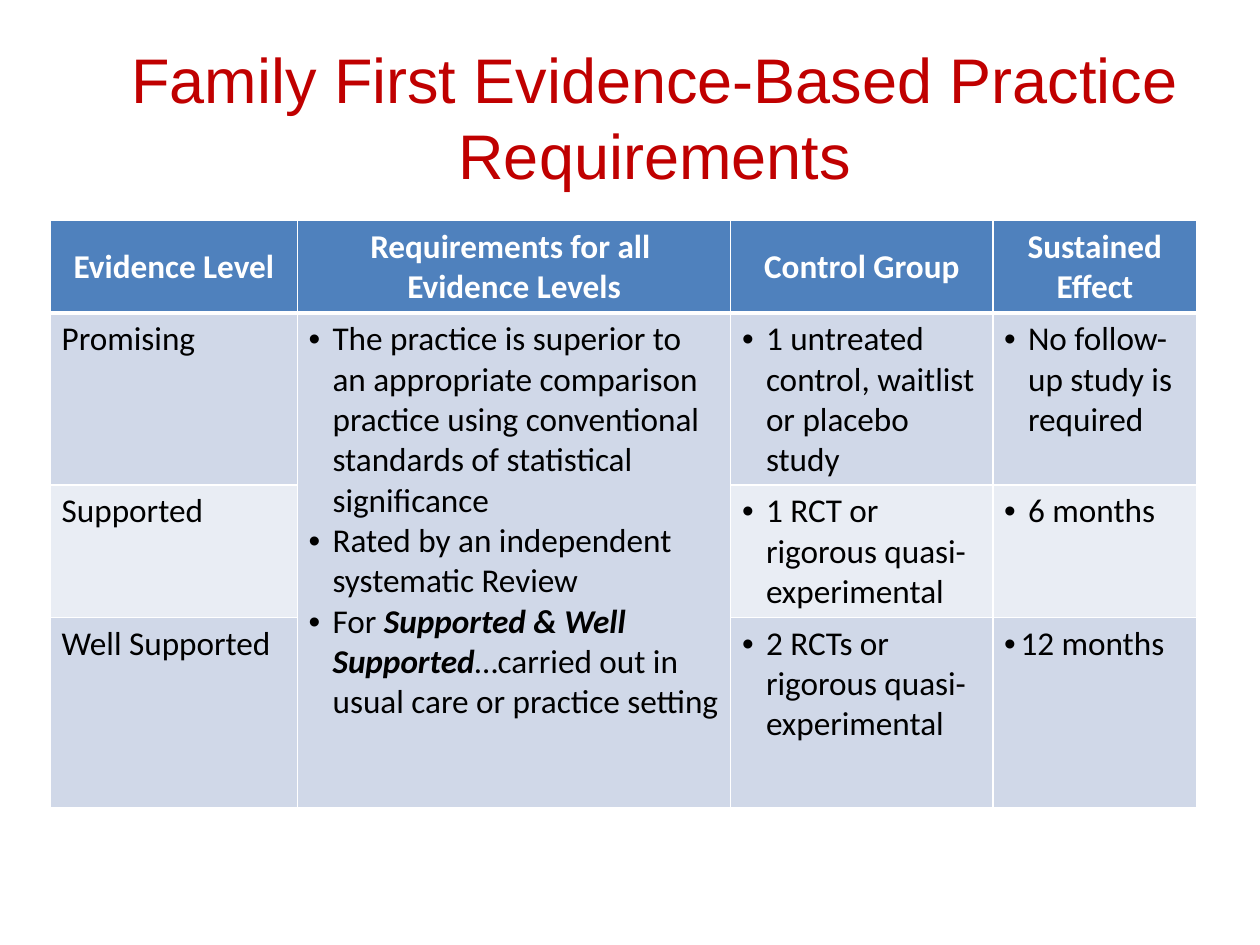
from dataclasses import dataclass

from lxml import etree
from pptx import Presentation
from pptx.dml.color import RGBColor
from pptx.enum.text import MSO_ANCHOR, PP_ALIGN
from pptx.oxml.ns import qn
from pptx.util import Inches, Pt

CENTER, LEFT = PP_ALIGN.CENTER, PP_ALIGN.LEFT
MIDDLE, TOP = MSO_ANCHOR.MIDDLE, MSO_ANCHOR.TOP

WHITE = RGBColor(0xFF, 0xFF, 0xFF)
BLACK = RGBColor(0x00, 0x00, 0x00)
RED = RGBColor(0xC0, 0x00, 0x00)
HEADER_BLUE = RGBColor(0x4F, 0x81, 0xBD)
BAND_DARK = RGBColor(0xD0, 0xD8, 0xE8)
BAND_LIGHT = RGBColor(0xE9, 0xED, 0xF4)

TITLE_FONT = {"name": "Arial", "size": Pt(36)}
HEADER_FONT = {"name": "Calibri", "size": Pt(19), "bold": True}
BODY_FONT = {"name": "Calibri", "size": Pt(19), "bold": False}
EMPHASIS = {"bold": True, "italic": True}

COLUMN_WIDTHS = (1.96, 3.44, 2.08, 1.62)
ROW_HEIGHTS = (0.73, 1.35, 1.04, 1.51)
CELL_MARGIN = 0.09
BULLET_INDENT = 0.19


@dataclass(frozen=True)
class Part:
    text: str
    emphasis: bool = False


@dataclass(frozen=True)
class Level:
    name: str
    control: str
    effect: str
    fill: RGBColor
    effect_indent: float = BULLET_INDENT


HEADERS = ("Evidence Level", "Requirements for all \nEvidence Levels",
           "Control Group", "Sustained Effect")
REQUIREMENTS = (
    (Part("The practice is superior to an appropriate comparison practice "
          "using conventional standards of statistical significance"),),
    (Part("Rated by an independent systematic Review"),),
    (Part("For "), Part("Supported & Well Supported", True),
     Part("…", False), Part("carried out in usual care or practice setting")),
)
LEVELS = (
    Level("Promising", "1 untreated control, waitlist or placebo study",
          "No follow-up study is required", BAND_DARK),
    Level("Supported", "1 RCT or rigorous quasi-experimental",
          "6 months", BAND_LIGHT),
    Level("Well Supported", "2 RCTs or rigorous quasi-experimental",
          "12 months", BAND_DARK, 0.13),
)


def add_text(paragraph, text: str, font: dict, color: RGBColor) -> None:
    """Add a formatted run for each line of the text."""
    for number, line in enumerate(text.split("\n")):
        if number:
            paragraph.add_line_break()
        run = paragraph.add_run()
        run.text = line
        for attribute, value in font.items():
            setattr(run.font, attribute, value)
        run.font.color.rgb = color


def add_bullet(paragraph, indent: float) -> None:
    properties = paragraph._p.get_or_add_pPr()
    properties.set("marL", str(Inches(indent)))
    properties.set("indent", str(-Inches(indent)))
    etree.SubElement(properties, qn("a:buFont"), typeface="Arial")
    etree.SubElement(properties, qn("a:buChar"), char="•")


def style_cell(cell, fill: RGBColor, top: float = 1, bottom: float = 1) -> None:
    """Set margins, white borders and fill; borders precede the fill."""
    cell.margin_left = cell.margin_right = Inches(CELL_MARGIN)
    properties = cell._tc.get_or_add_tcPr()
    for side, width in {"L": 1, "R": 1, "T": top, "B": bottom}.items():
        border = etree.SubElement(properties, qn(f"a:ln{side}"), w=str(Pt(width)))
        solid = etree.SubElement(border, qn("a:solidFill"))
        etree.SubElement(solid, qn("a:srgbClr"), val=str(WHITE))
    cell.fill.solid()
    cell.fill.fore_color.rgb = fill


def fill_bullets(cell, items: tuple, indent: float = BULLET_INDENT) -> None:
    frame = cell.text_frame
    for number, parts in enumerate(items):
        paragraph = frame.add_paragraph() if number else frame.paragraphs[0]
        add_bullet(paragraph, indent)
        for part in parts:
            font = BODY_FONT | (EMPHASIS if part.emphasis else {})
            add_text(paragraph, part.text, font, BLACK)


def add_title(slide, text: str) -> None:
    box = slide.shapes.add_textbox(Inches(0.5), Inches(0.3), Inches(9.39), Inches(1.25))
    frame = box.text_frame
    frame.word_wrap = True
    frame.vertical_anchor = MIDDLE
    frame.paragraphs[0].alignment = CENTER
    add_text(frame.paragraphs[0], text, TITLE_FONT, RED)


def add_evidence_table(slide) -> None:
    table = slide.shapes.add_table(
        len(ROW_HEIGHTS), len(COLUMN_WIDTHS), Inches(0.4), Inches(1.75),
        Inches(sum(COLUMN_WIDTHS)), Inches(sum(ROW_HEIGHTS))).table
    for column, width in zip(table.columns, COLUMN_WIDTHS):
        column.width = Inches(width)
    for row, height in zip(table.rows, ROW_HEIGHTS):
        row.height = Inches(height)

    # Header row
    for column, header in enumerate(HEADERS):
        cell = table.cell(0, column)
        style_cell(cell, HEADER_BLUE, bottom=3)
        cell.vertical_anchor = MIDDLE
        paragraph = cell.text_frame.paragraphs[0]
        paragraph.alignment = CENTER
        add_text(paragraph, header, HEADER_FONT, WHITE)

    # One row for each evidence level
    for row, level in enumerate(LEVELS, start=1):
        for column in range(len(HEADERS)):
            cell = table.cell(row, column)
            style_cell(cell, level.fill, top=3 if row == 1 else 1)
            cell.vertical_anchor = TOP
        name = table.cell(row, 0).text_frame.paragraphs[0]
        name.alignment = LEFT
        add_text(name, level.name, BODY_FONT, BLACK)
        fill_bullets(table.cell(row, 2), ((Part(level.control),),))
        fill_bullets(table.cell(row, 3), ((Part(level.effect),),), level.effect_indent)

    # Requirements shared by all levels
    shared = table.cell(1, 1)
    shared.merge(table.cell(len(LEVELS), 1))
    fill_bullets(shared, REQUIREMENTS)


def main() -> None:
    presentation = Presentation()
    presentation.slide_width, presentation.slide_height = Inches(10), Inches(7.5)
    slide = presentation.slides.add_slide(presentation.slide_layouts[6])
    add_title(slide, "Family First Evidence-Based Practice Requirements")
    add_evidence_table(slide)
    presentation.save("out.pptx")


if __name__ == "__main__":
    main()
